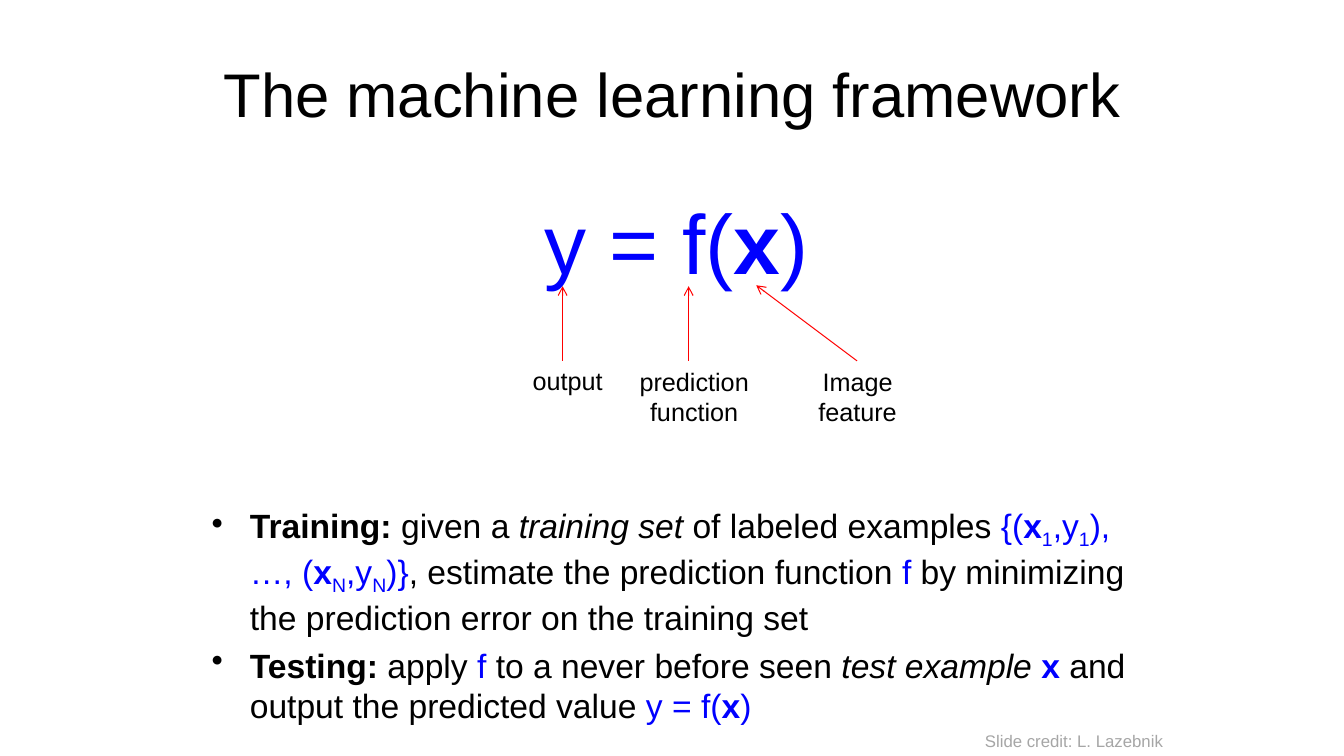
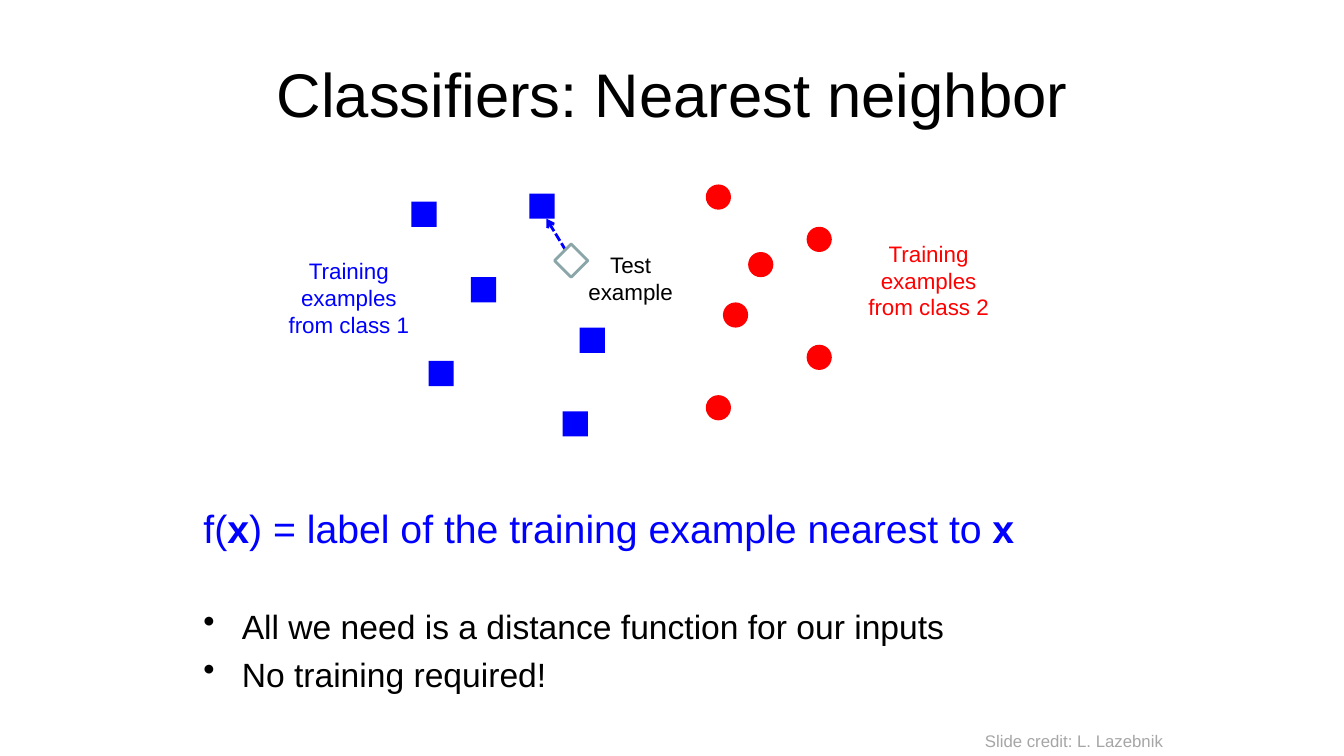
"""Build two lecture slides on the machine learning framework and nearest neighbor."""
from pptx import Presentation
from pptx import util as u
from pptx.dml.color import RGBColor
from pptx.enum import dml, shapes, text
from pptx.oxml import parse_xml
from pptx.oxml.ns import nsdecls, qn

HUES = {"ink": "000000", "blue": "0000FF", "red": "FF0000",
        "grey": "A6A6A6", "edge": "8AA6A8", "white": "FFFFFF"}
FONT = "Arial"
MID, LEFT = text.PP_ALIGN.CENTER, text.PP_ALIGN.LEFT
SHAPE = shapes.MSO_SHAPE
CREDIT = "Slide credit: L. Lazebnik"
INDENT = 0.38
MARK = 0.25

# Style letters: b bold, i italic, s subscript, u blue.
FORMULA = [("y = f(", "u"), ("x", "ub"), (")", "u")]
STEPS = [
    [("Training: ", "b"), ("given a ", ""), ("training set ", "i"),
     ("of labeled examples ", ""), ("{(", "u"), ("x", "ub"), ("1", "us"),
     (",y", "u"), ("1", "us"), ("), …, (", "u"), ("x", "ub"), ("N", "us"),
     (",y", "u"), ("N", "us"), (")}", "u"),
     (", estimate the prediction function ", ""), ("f ", "u"),
     ("by minimizing the prediction error on the training set", "")],
    [("Testing:", "b"), (" apply ", ""), ("f", "u"),
     (" to a never before seen ", ""), ("test example ", "i"), ("x", "ub"),
     (" and output the predicted value ", "")] + FORMULA,
]
PARTS = [("output", (4.73, 3.58, 1.8, 0.4)),
         ("prediction function", (5.85, 3.58, 2.07, 0.71)),
         ("Image feature", (7.68, 3.58, 1.65, 0.71))]
ARROWS = [(5.58, 3.58, 5.58, 2.84), (6.83, 3.58, 6.83, 2.84),
          (8.5, 3.58, 7.5, 2.83)]

RULE = [("f(", "u"), ("x", "ub"),
        (") = label of the training example nearest to ", "u"), ("x", "ub")]
NOTES = [[("All we need is a distance function for our inputs", "")],
         [("No training required!", "")]]
CLASSES = [
    (SHAPE.RECTANGLE, "blue", [(4.08, 2), (4.67, 2.75), (5.25, 1.92),
                               (4.25, 3.58), (5.75, 3.25), (5.58, 4.08)]),
    (SHAPE.OVAL, "red", [(8, 2.25), (7.17, 3), (8, 3.42),
                         (7, 1.83), (7.42, 2.5), (7, 3.92)]),
]
LABELS = [("Test example", "ink", (5.67, 2.44, 1.17, 0.64)),
          ("Training examples from class 1", "blue", (2.75, 2.5, 1.42, 0.91)),
          ("Training examples from class 2", "red", (8.5, 2.33, 1.42, 0.91))]


def rgb(hue):
    return RGBColor.from_string(HUES[hue])


def inches(nums):
    return [u.Inches(n) for n in nums]


def write(slide, paras, at, size, hue="ink", align=LEFT, bullet=False,
          anchor=text.MSO_ANCHOR.TOP):
    frame = slide.shapes.add_textbox(*inches(at)).text_frame
    frame.word_wrap = True
    frame.vertical_anchor = anchor
    for n, runs in enumerate(paras):
        para = frame.add_paragraph() if n else frame.paragraphs[0]
        para.alignment = align
        if n:
            para.space_before = u.Pt(5.5)
        if bullet:
            props = para._p.get_or_add_pPr()
            props.set("marL", str(u.Inches(INDENT)))
            props.set("indent", str(-u.Inches(INDENT)))
            props.append(parse_xml(f'<a:buChar {nsdecls("a")} char="•"/>'))
        for words, style in runs:
            run = para.add_run()
            run.text = words
            look = {"name": FONT, "size": u.Pt(size),
                    "bold": "b" in style, "italic": "i" in style}
            for key, val in look.items():
                setattr(run.font, key, val)
            run.font.color.rgb = rgb("blue" if "u" in style else hue)
            if "s" in style:
                run._r.get_or_add_rPr().set("baseline", "-25000")


def arrow(slide, ends, hue, width, dash=None):
    link = slide.shapes.add_connector(shapes.MSO_CONNECTOR.STRAIGHT,
                                      *inches(ends))
    link.line.color.rgb = rgb(hue)
    link.line.width = u.Pt(width)
    if dash:
        link.line.dash_style = dash
    props = link._element.spPr
    props.find(qn("a:ln")).append(
        parse_xml(f'<a:tailEnd {nsdecls("a")} type="arrow"/>'))
    props.append(parse_xml(f'<a:effectLst {nsdecls("a")}/>'))


def mark(slide, kind, at, fill, edge=None):
    shape = slide.shapes.add_shape(kind, *inches(at))
    shape.shadow.inherit = False
    shape.fill.solid()
    shape.fill.fore_color.rgb = rgb(fill)
    if edge:
        shape.line.color.rgb = rgb(edge)
        shape.line.width = u.Pt(2)
    else:
        shape.line.fill.background()


def start(deck, title):
    slide = deck.slides.add_slide(deck.slide_layouts[6])
    write(slide, [[(title, "")]], (0.67, 0.3, 12, 1.25), 44, align=MID,
          anchor=text.MSO_ANCHOR.MIDDLE)
    write(slide, [[(CREDIT, "")]], (9.67, 7.2, 2.1, 0.3), 12, "grey")
    return slide


def framework(deck):
    slide = start(deck, "The machine learning framework")
    write(slide, [FORMULA], (2, 1.84, 9.42, 1.1), 60, align=MID)
    write(slide, STEPS, (2, 4.96, 9.42, 2.2), 24, bullet=True)
    for ends in ARROWS:
        arrow(slide, ends, "red", 0.75)
    for words, at in PARTS:
        write(slide, [[(words, "")]], at, 18, align=MID)


def nearest(deck):
    slide = start(deck, "Classifiers: Nearest neighbor")
    write(slide, [RULE], (1.92, 4.95, 9.5, 0.6), 28)
    write(slide, NOTES, (1.92, 5.96, 9.5, 1), 24, bullet=True)
    for kind, hue, spots in CLASSES:
        for x, y in spots:
            mark(slide, kind, (x, y, MARK, MARK), hue)
    for words, hue, at in LABELS:
        write(slide, [[(words, "")]], at, 16, hue, MID)
    arrow(slide, (5.67, 2.58, 5.42, 2.17), "blue", 2,
          dml.MSO_LINE.SQUARE_DOT)
    mark(slide, SHAPE.DIAMOND, (5.5, 2.42, 0.33, 0.33), "white", "edge")


def main():
    deck = Presentation()
    deck.slide_width, deck.slide_height = inches((13.33, 7.5))
    framework(deck)
    nearest(deck)
    deck.save("out.pptx")


if __name__ == "__main__":
    main()
